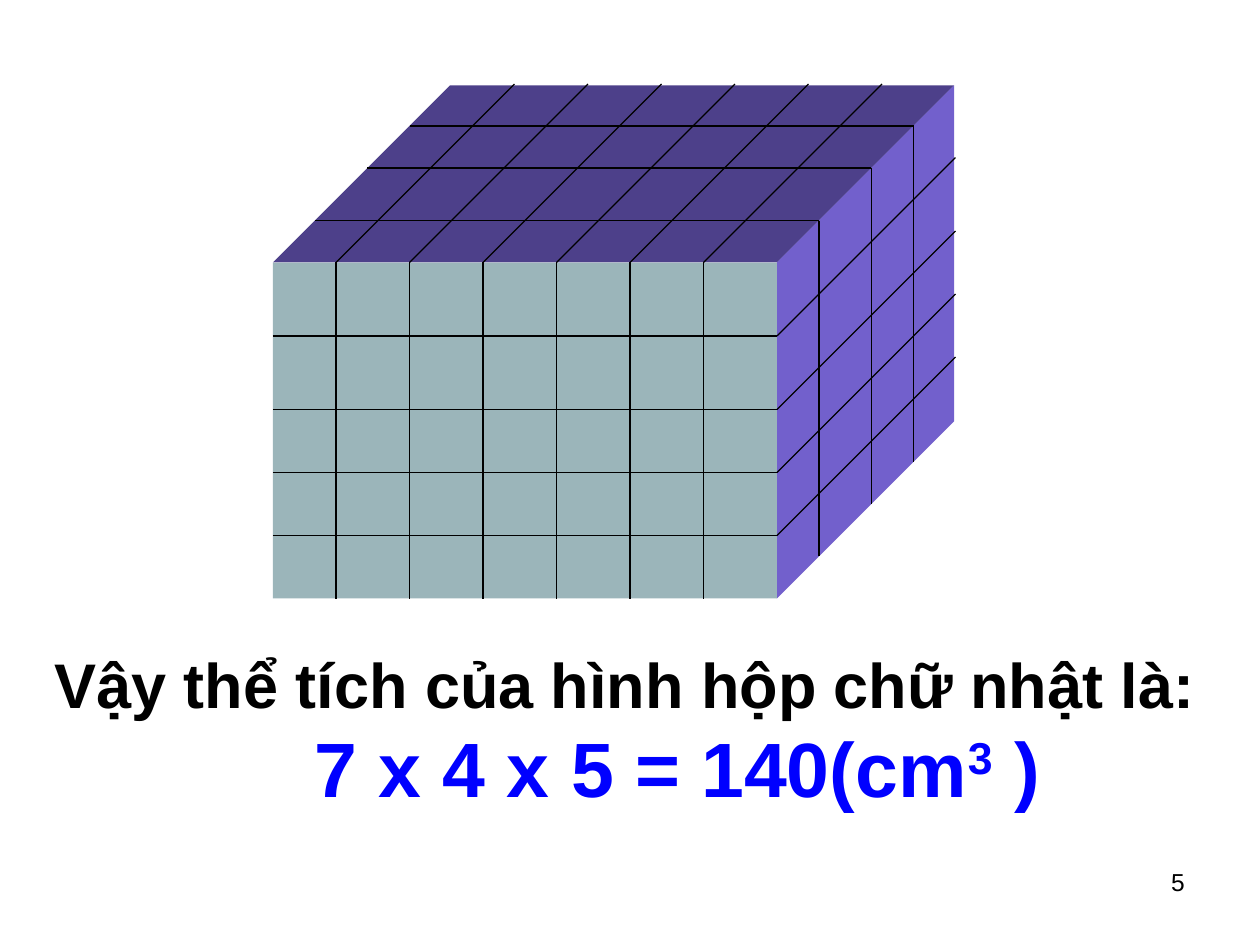
from dataclasses import dataclass

from lxml import etree
from pptx import Presentation
from pptx import util as u
from pptx.dml.color import RGBColor
from pptx.enum import shapes, text
from pptx.oxml.ns import qn

PX = 9525


@dataclass(frozen=True)
class Theme:
    font: str = "Arial"
    ink: str = "000000"
    result: str = "0000FF"
    front: str = "9BB5BA"
    top: str = "4D408A"
    side: str = "7260CC"
    statement_size: int = 36
    result_size: int = 44
    number_size: int = 14
    grid_width: float = 0.75


class SlideBuilder:
    def __init__(self, slide, theme):
        self.slide = slide
        self.theme = theme

    def paint(self, shape, color):
        shape.shadow.inherit = False
        shape.fill.solid()
        shape.fill.fore_color.rgb = RGBColor.from_string(color)
        shape.line.fill.background()

    def rectangle(self, left, top, width, height, color):
        face = self.slide.shapes.add_shape(
            shapes.MSO_SHAPE.RECTANGLE, left * PX, top * PX, width * PX, height * PX)
        self.paint(face, color)

    def polygon(self, points, color):
        outline = self.slide.shapes.build_freeform(*points[0], scale=PX)
        outline.add_line_segments(points[1:], close=True)
        self.paint(outline.convert_to_shape(), color)

    def line(self, x1, y1, x2, y2):
        edge = self.slide.shapes.add_connector(
            shapes.MSO_CONNECTOR.STRAIGHT, x1 * PX, y1 * PX, x2 * PX, y2 * PX)
        edge.line.color.rgb = RGBColor.from_string(self.theme.ink)
        edge.line.width = u.Pt(self.theme.grid_width)
        etree.SubElement(edge._element.spPr, qn("a:effectLst"))

    def text_box(self, left, top, width, height, content):
        box = self.slide.shapes.add_textbox(left * PX, top * PX, width * PX, height * PX)
        box.text_frame.word_wrap = True
        box.text_frame.text = content
        return box.text_frame

    def format(self, paragraph, size, color, bold=False, align=text.PP_ALIGN.LEFT):
        paragraph.alignment = align
        for run in paragraph.runs:
            run.font.name = self.theme.font
            run.font.size = u.Pt(size)
            run.font.bold = bold
            run.font.color.rgb = RGBColor.from_string(color)


def draw_box(builder):
    theme = builder.theme
    left, top, width, height = 208, 200, 384, 256
    right, bottom = left + width, top + height
    depth, line_depth = 135, 136
    columns = [256, 312, 368, 424, 480, 536]
    rows = [256, 312, 360, 408]
    layers = [32, 72, 104]

    builder.polygon([(left, top), (left + depth, top - depth),
                     (right + depth, top - depth), (right, top)], theme.top)
    builder.polygon([(right, top), (right + depth, top - depth),
                     (right + depth, bottom - depth), (right, bottom)], theme.side)
    builder.rectangle(left, top, width, height, theme.front)

    for y in rows:
        builder.line(left, y, right, y)
        builder.line(right, y, right + line_depth, y - line_depth)
    for x in columns:
        builder.line(x, top, x, bottom)
        builder.line(x, top, x + line_depth, top - line_depth)
    for shift in layers:
        builder.line(left + shift, top - shift, right + shift, top - shift)
        builder.line(right + shift, top - shift, right + shift, bottom - shift)


def write_conclusion(builder):
    theme = builder.theme
    conclusion = builder.text_box(32, 487, 904, 139, "Vậy thể tích của hình hộp chữ nhật là:")
    builder.format(conclusion.paragraphs[0], theme.statement_size, theme.ink, bold=True)

    volume = conclusion.add_paragraph()
    for part in ("7 x 4 x 5 = 140(cm", "3", " )"):
        volume.add_run().text = part
    builder.format(volume, theme.result_size, theme.result, True, text.PP_ALIGN.CENTER)
    volume._p.get_or_add_pPr().set("marL", str(64 * PX))
    volume.runs[1].font._element.set("baseline", "30000")


def main():
    deck = Presentation()
    deck.slide_width, deck.slide_height = 960 * PX, 720 * PX
    builder = SlideBuilder(deck.slides.add_slide(deck.slide_layouts[6]), Theme())
    draw_box(builder)
    write_conclusion(builder)
    page = builder.text_box(688, 656, 224, 50, "5")
    builder.format(page.paragraphs[0], builder.theme.number_size, builder.theme.ink,
                   align=text.PP_ALIGN.RIGHT)
    deck.save("out.pptx")


if __name__ == "__main__":
    main()
